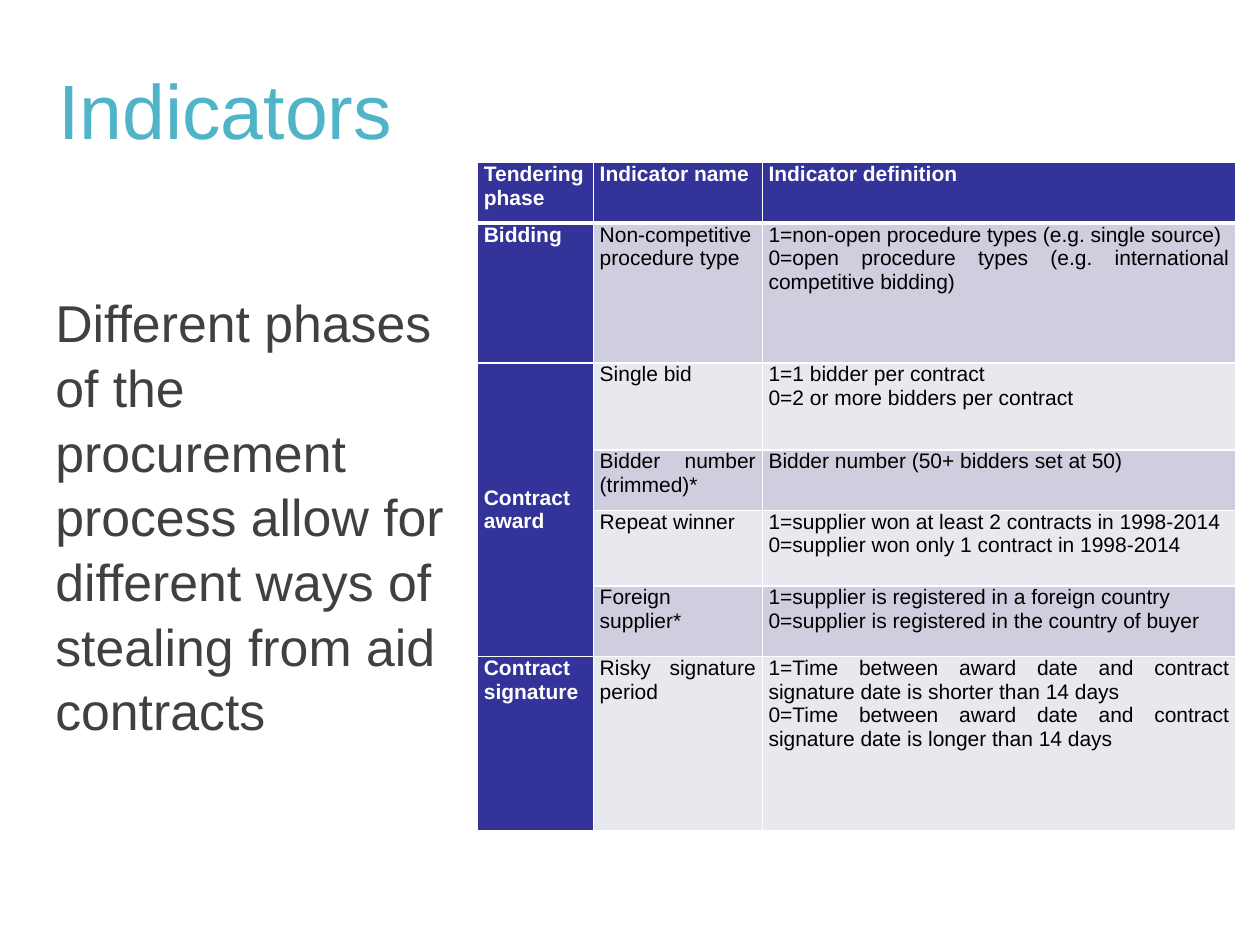
"""Build the slide on procurement indicators with its table of definitions."""
from typing import NamedTuple

from lxml import etree
from pptx import Presentation
from pptx.dml.color import RGBColor
from pptx.enum.text import MSO_ANCHOR, MSO_AUTO_SIZE, PP_ALIGN
from pptx.oxml.ns import qn
from pptx.util import Inches, Pt

LEFT, CENTER, JUST = PP_ALIGN.LEFT, PP_ALIGN.CENTER, PP_ALIGN.JUSTIFY
TOP, MIDDLE = MSO_ANCHOR.TOP, MSO_ANCHOR.MIDDLE
NO_FIT = MSO_AUTO_SIZE.NONE

FONT = "Arial"
COLORS = {
    "title": "50B4C8",
    "body": "404040",
    "head": "333399",
    "dark": "CECEDE",
    "light": "E8E8EF",
    "white": "FFFFFF",
    "black": "000000",
}
WIDTHS = (0.92, 1.34, 3.76)


class Row(NamedTuple):
    """One table row, with its height and the lines of its definition."""
    height: float
    phase: str
    name: str
    lines: tuple[str, ...]


class Style(NamedTuple):
    """The look of a run of text."""
    size: float
    color: str
    bold: bool = False


ROWS = (
    Row(0.48, "Tendering phase", "Indicator name", ("Indicator definition",)),
    Row(1.11, "Bidding", "Non-competitive procedure type", (
        "1=non-open procedure types (e.g. single source)",
        "0=open procedure types (e.g. international competitive bidding)")),
    Row(0.69, "Contract award", "Single bid", (
        "1=1 bidder per contract",
        "0=2 or more bidders per contract")),
    Row(0.48, "", "Bidder number (trimmed)*", (
        "Bidder number (50+ bidders set at 50)",)),
    Row(0.6, "", "Repeat winner", (
        "1=supplier won at least 2 contracts in 1998-2014",
        "0=supplier won only 1 contract in 1998-2014")),
    Row(0.56, "", "Foreign supplier*", (
        "1=supplier is registered in a foreign country",
        "0=supplier is registered in the country of buyer")),
    Row(1.38, "Contract signature", "Risky signature period", (
        "1=Time between award date and contract signature date is shorter than 14 days",
        "0=Time between award date and contract signature date is longer than 14 days")),
)
AWARD = (2, 5)


def write(frame, lines: tuple[str, ...], style: Style, align) -> None:
    """Write each line as a paragraph holding one run."""
    for i, line in enumerate(lines):
        para = frame.paragraphs[0] if i == 0 else frame.add_paragraph()
        para.alignment = align
        run = para.add_run()
        run.text = line
        font = run.font
        font.name, font.size, font.bold = FONT, Pt(style.size), style.bold
        font.color.rgb = RGBColor.from_string(COLORS[style.color])


def edge(cell, top: int, bottom: int) -> None:
    """Give the cell white borders of the given point widths."""
    props = cell._tc.get_or_add_tcPr()
    sides = {"L": 1, "R": 1, "T": top, "B": bottom}
    for i, (side, width) in enumerate(sides.items()):
        line = etree.Element(qn(f"a:ln{side}"), w=str(Pt(width)))
        fill = etree.SubElement(line, qn("a:solidFill"))
        etree.SubElement(fill, qn("a:srgbClr"), val=COLORS["white"])
        props.insert(i, line)


def draw_cell(cell, lines: tuple[str, ...], row: int, col: int) -> None:
    """Fill, border and write one table cell."""
    head = row == 0 or col == 0
    award = col == 0 and row == AWARD[0]
    shade = "head" if head else "dark" if row % 2 else "light"
    cell.fill.solid()
    cell.fill.fore_color.rgb = RGBColor.from_string(COLORS[shade])
    cell.margin_left = cell.margin_right = Inches(0.05)
    cell.margin_top = cell.margin_bottom = 0
    cell.vertical_anchor = MIDDLE if award else TOP
    edge(cell, 3 if row == 1 else 1, 3 if row == 0 else 1)
    if lines[0]:
        style = Style(12, "white" if head else "black", head)
        write(cell.text_frame, lines, style, LEFT if award else JUST)


def draw_table(slide) -> None:
    """Draw the table of indicators."""
    high = sum(row.height for row in ROWS)
    table = slide.shapes.add_table(
        len(ROWS), len(WIDTHS), Inches(3.79), Inches(1.29),
        Inches(sum(WIDTHS)), Inches(high)).table
    for col, width in zip(table.columns, WIDTHS):
        col.width = Inches(width)
    for r, row in enumerate(ROWS):
        table.rows[r].height = Inches(row.height)
        for c, lines in enumerate(((row.phase,), (row.name,), row.lines)):
            draw_cell(table.cell(r, c), lines, r, c)
    first, last = AWARD
    table.cell(first, 0).merge(table.cell(last, 0))


def draw_title(slide) -> None:
    """Place and write the title."""
    title = slide.shapes.title
    title.left, title.top = Inches(0.36), Inches(0.44)
    title.width, title.height = Inches(2.86), Inches(0.85)
    frame = title.text_frame
    frame.auto_size = NO_FIT
    frame.word_wrap = True
    frame.margin_left = frame.margin_right = Inches(0.05)
    frame.vertical_anchor = MIDDLE
    write(frame, ("Indicators",), Style(44, "title"), CENTER)


def draw_body(slide) -> None:
    """Write the statement beside the table."""
    box = slide.shapes.add_textbox(
        Inches(0.34), Inches(2.22), Inches(3.45), Inches(3.52))
    frame = box.text_frame
    frame.word_wrap = True
    frame.margin_top = Inches(0.07)
    text = ("Different phases of the procurement process allow for "
            "different ways of stealing from aid contracts")
    write(frame, (text,), Style(29.6, "body"), LEFT)
    frame.paragraphs[0].line_spacing = 1.04


def main() -> None:
    """Build and save the slide."""
    deck = Presentation()
    deck.slide_width, deck.slide_height = Inches(10), Inches(7.5)
    slide = deck.slides.add_slide(deck.slide_layouts[5])
    draw_title(slide)
    draw_body(slide)
    draw_table(slide)
    deck.save("out.pptx")


if __name__ == "__main__":
    main()
